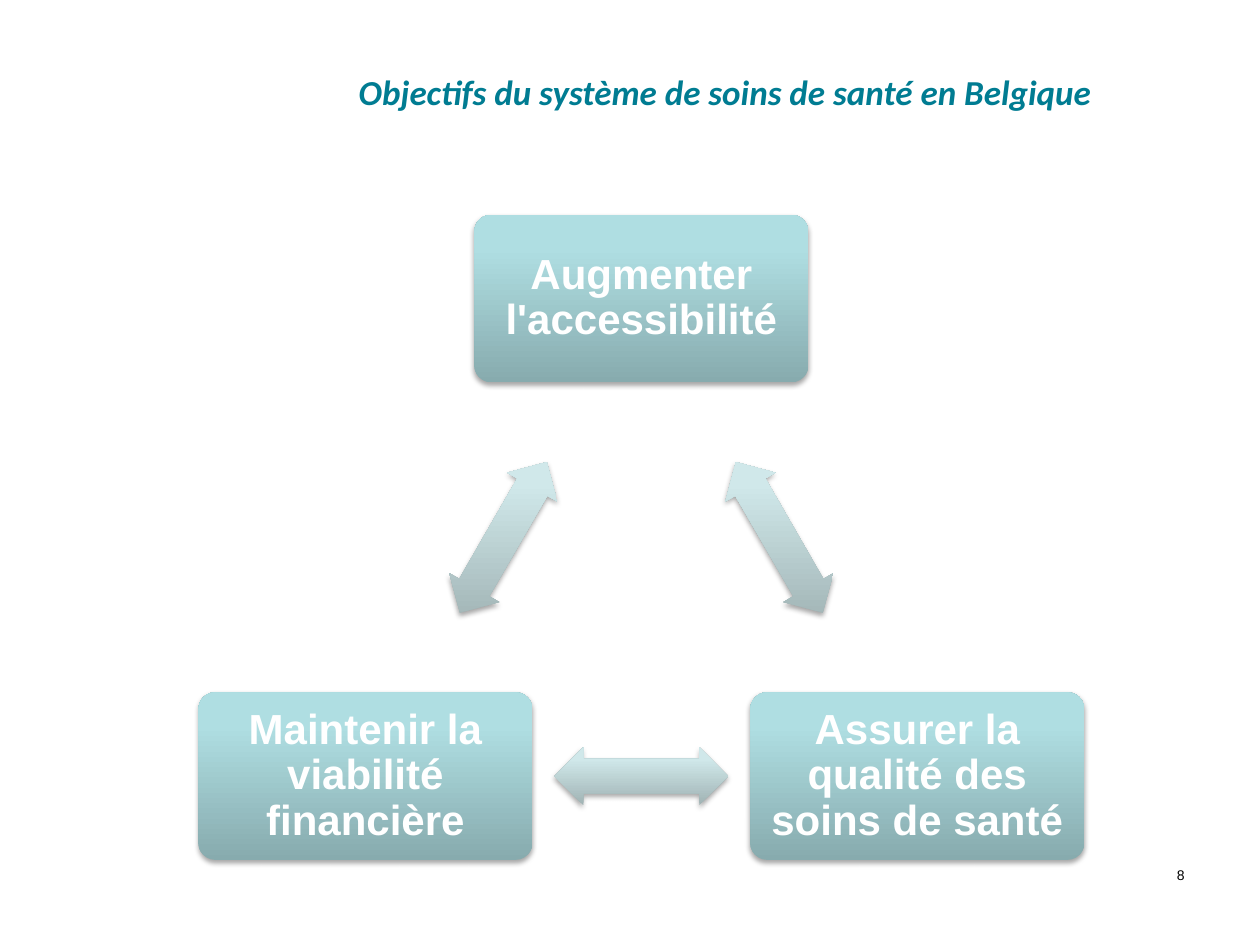
"""Build the slide on the three goals of the Belgian health care system."""
from dataclasses import dataclass

import pptx
import pptx.dml.color
import pptx.enum.shapes
import pptx.enum.text
import pptx.oxml
import pptx.oxml.ns
import pptx.util

Inches = pptx.util.Inches
Pt = pptx.util.Pt
RGBColor = pptx.dml.color.RGBColor
Preset = pptx.enum.shapes.MSO_SHAPE
Align = pptx.enum.text.PP_ALIGN
Anchor = pptx.enum.text.MSO_ANCHOR

WHITE = RGBColor(0xFF, 0xFF, 0xFF)
BLACK = RGBColor(0x00, 0x00, 0x00)
TEAL = RGBColor(0x00, 0x7C, 0x92)
GOAL_STOPS = (
    (0, RGBColor(0x87, 0xAB, 0xAE)),
    (80, RGBColor(0xAF, 0xDE, 0xE2)),
    (100, RGBColor(0xAF, 0xE0, 0xE4)),
)
ARROW_STOPS = (
    (0, RGBColor(0xA0, 0xB3, 0xB4)),
    (80, RGBColor(0xD0, 0xE8, 0xEA)),
    (100, RGBColor(0xD0, 0xEA, 0xEC)),
)
GOAL_SIZE = (2.65, 1.33)
ARROW_SIZE = (1.38, 0.46)


@dataclass(frozen=True)
class Goal:
    text: str
    x: float
    y: float


GOALS = (
    Goal("Augmenter l'accessibilité", 5.09, 2.37),
    Goal("Assurer la qualité des soins de santé", 7.28, 6.16),
    Goal("Maintenir la viabilité financière", 2.9, 6.16),
)


def write(frame, text: str, *, size: float, color: RGBColor, font: str = "Arial",
          align=Align.CENTER, anchor=Anchor.MIDDLE, bold: bool = False,
          italic: bool = False, spacing: float = 1.0,
          inset: tuple[float, float] = (0.1, 0.05)) -> None:
    frame.word_wrap = True
    frame.vertical_anchor = anchor
    frame.margin_left = frame.margin_right = Inches(inset[0])
    frame.margin_top = frame.margin_bottom = Inches(inset[1])
    paragraph = frame.paragraphs[0]
    paragraph.alignment = align
    paragraph.line_spacing = spacing
    run = paragraph.add_run()
    run.text = text
    run.font.name = font
    run.font.size = Pt(size)
    run.font.bold = bold
    run.font.italic = italic
    run.font.color.rgb = color


def draw_raised(slide, preset, x: float, y: float, size: tuple[float, float],
                stops, adjustments: tuple[float, ...]):
    width, height = size
    shape = slide.shapes.add_shape(
        preset, Inches(x - width / 2), Inches(y - height / 2), Inches(width), Inches(height))
    for index, value in enumerate(adjustments):
        shape.adjustments[index] = value
    shape.line.fill.background()
    shape.shadow.inherit = False
    namespace = pptx.oxml.ns.nsdecls("a")
    colors = "".join(
        f'<a:gs pos="{position * 1000}"><a:srgbClr val="{color}"/></a:gs>'
        for position, color in stops)
    properties = shape.element.spPr
    properties.find(pptx.oxml.ns.qn("a:prstGeom")).addnext(pptx.oxml.parse_xml(
        f'<a:gradFill {namespace} rotWithShape="0"><a:gsLst>{colors}</a:gsLst>'
        '<a:lin ang="16200000" scaled="0"/></a:gradFill>'))
    properties.find(pptx.oxml.ns.qn("a:effectLst")).append(pptx.oxml.parse_xml(
        f'<a:outerShdw {namespace} blurRad="{Pt(3.1)}" dist="{Pt(1.8)}" dir="5400000" '
        'rotWithShape="0"><a:srgbClr val="000000"><a:alpha val="35000"/></a:srgbClr>'
        '</a:outerShdw>'))
    return shape


def draw_goal(slide, goal: Goal) -> None:
    box = draw_raised(slide, Preset.ROUNDED_RECTANGLE, goal.x, goal.y, GOAL_SIZE,
                      GOAL_STOPS, (0.1,))
    write(box.text_frame, goal.text, size=24, color=WHITE, bold=True, spacing=0.9,
          inset=(0.08, 0.08))


def draw_link(slide, start: Goal, end: Goal, rotation: float) -> None:
    arrow = draw_raised(slide, Preset.LEFT_RIGHT_ARROW, (start.x + end.x) / 2,
                        (start.y + end.y) / 2, ARROW_SIZE, ARROW_STOPS, (0.6, 0.5))
    arrow.rotation = rotation


def main() -> None:
    deck = pptx.Presentation()
    deck.slide_width, deck.slide_height = Inches(10), Inches(7.5)
    slide = deck.slides.add_slide(deck.slide_layouts[6])

    title = slide.shapes.add_textbox(Inches(2.01), Inches(0.3), Inches(7.49), Inches(0.85))
    write(title.text_frame, "Objectifs du système de soins de santé en Belgique",
          size=20, color=TEAL, font="Calibri", bold=True, italic=True)

    for index, goal in enumerate(GOALS):
        draw_goal(slide, goal)
        draw_link(slide, goal, GOALS[(index + 1) % len(GOALS)], 60 + 120 * index)

    page_number = slide.shapes.add_textbox(
        Inches(7.17), Inches(6.83), Inches(2.33), Inches(0.52))
    write(page_number.text_frame, "8", size=8, color=BLACK, align=Align.RIGHT,
          anchor=Anchor.TOP)

    deck.save("out.pptx")


if __name__ == "__main__":
    main()
